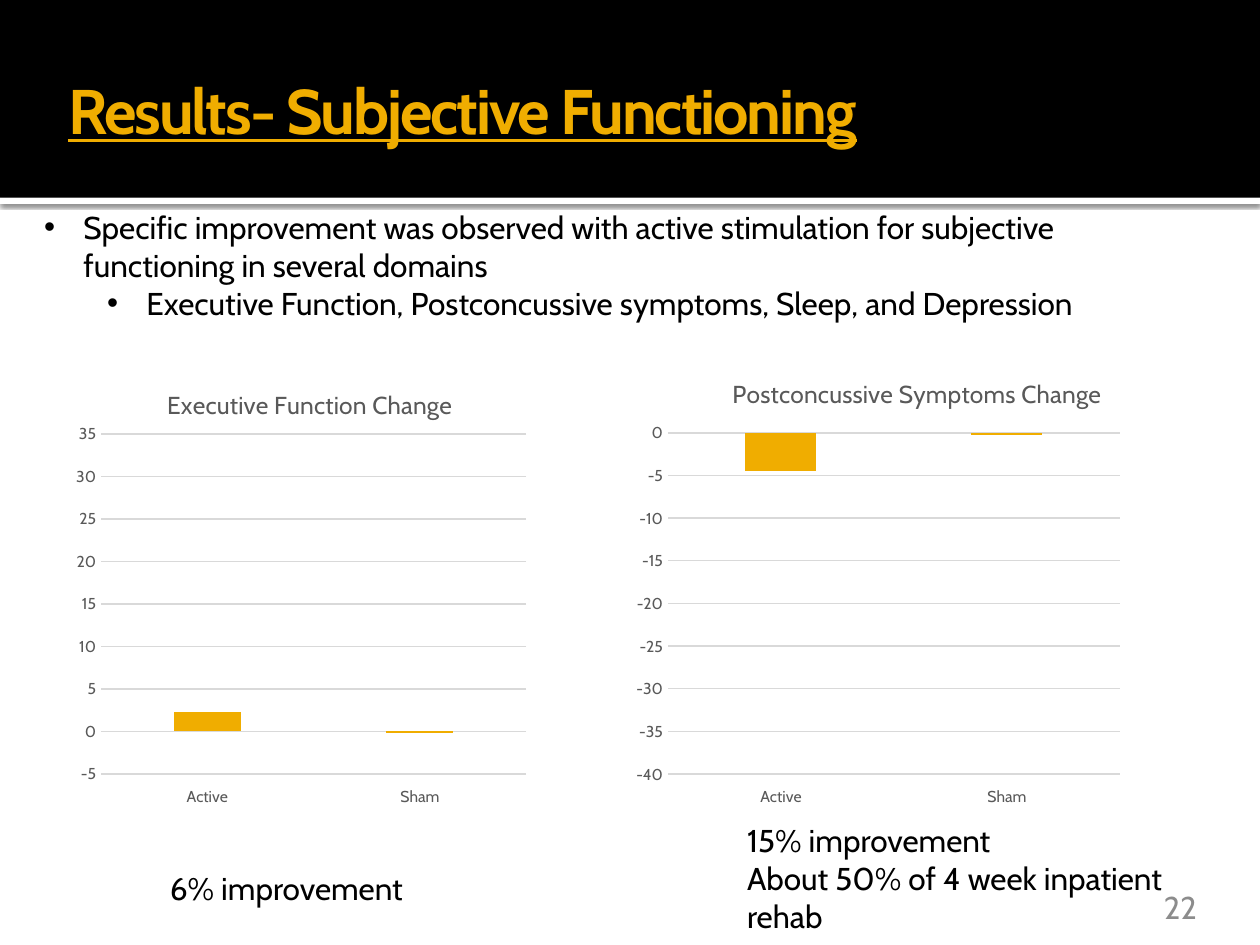
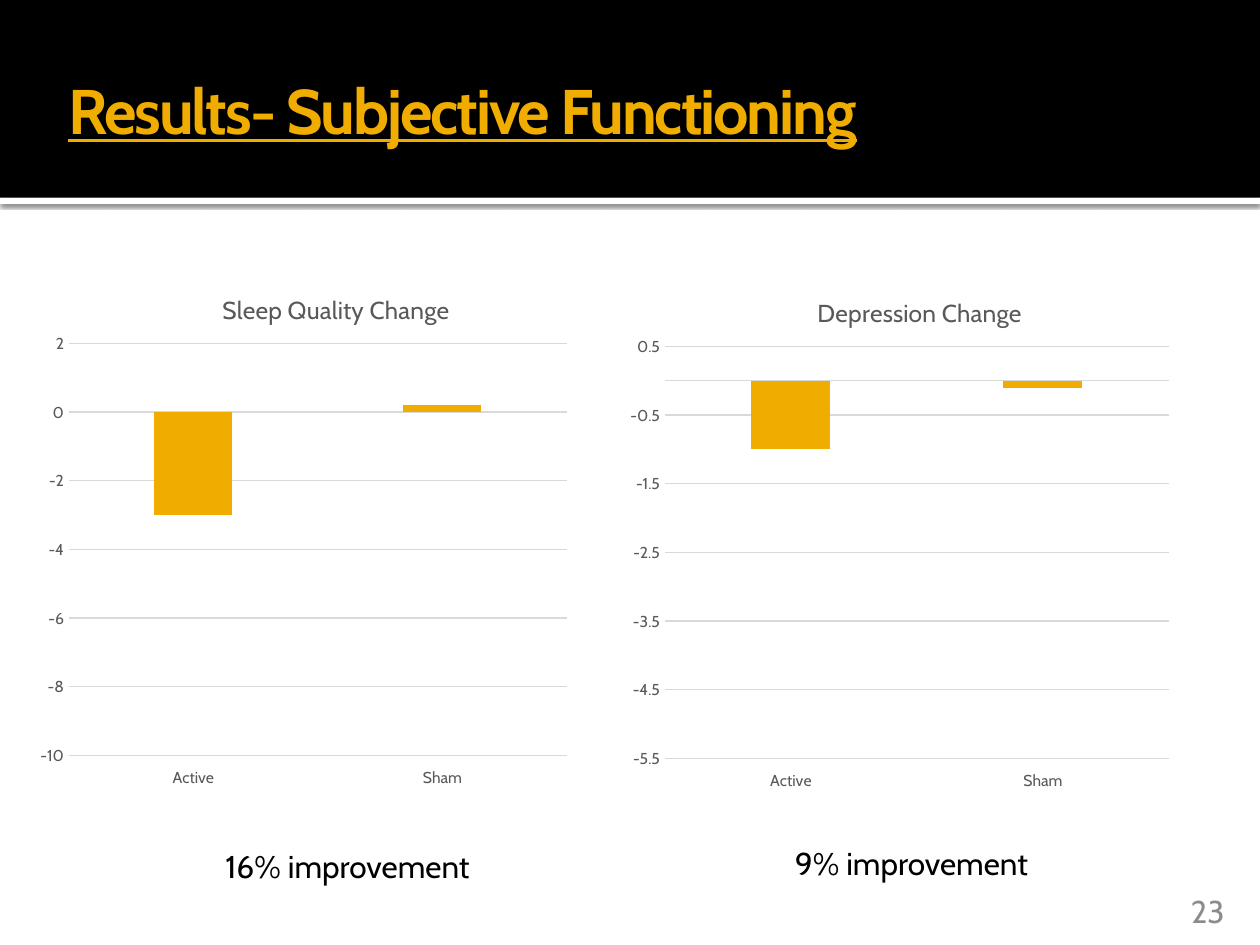
from dataclasses import dataclass
from typing import NamedTuple

from pptx import Presentation, oxml
from pptx.chart import data as chart_data
from pptx.dml.color import RGBColor
from pptx.enum import chart as chart_enum, shapes, text
from pptx.oxml import ns
from pptx.util import Pt

FONT = "Cabin"
COLOURS = {
    "gold": "F0AD00",
    "black": "000000",
    "white": "FFFFFF",
    "label": "595959",
    "grid": "D9D9D9",
    "number": "8C8C8C",
}
TITLE = "Results- Subjective Functioning"
GROUPS = ("Active", "Sham")
BAND_HEIGHT = 113


class Frame(NamedTuple):
    left: float
    top: float
    width: float
    height: float


@dataclass
class Panel:
    """A change chart; title_at and plot are measured on the slide."""
    title: str
    values: tuple[float, float]
    low: float
    high: float
    step: float
    frame: Frame
    title_at: tuple[float, float]
    plot: Frame


@dataclass
class Note:
    lines: list[str]
    frame: Frame


@dataclass
class Results:
    number: str
    number_frame: Frame
    panels: list[Panel]
    notes: list[Note]
    findings: list[tuple[str, int]]


RESULTS = [
    Results(
        "22", Frame(518.4, 501.8, 165.6, 27.4),
        [
            Panel("Executive Function Change", (2.3, -0.2), -5, 35, 5,
                  Frame(38.2, 202.3, 267.8, 263.5), (93, 219),
                  Frame(57.7, 248, 243, 194.3)),
            Panel("Postconcussive Symptoms Change", (-4.5, -0.2), -40, 0, 5,
                  Frame(357.8, 203, 288, 263.5), (416, 213),
                  Frame(381.7, 247.4, 258.3, 195)),
        ],
        [
            Note(["15% improvement", "About 50% of 4 week inpatient rehab"],
                 Frame(419.8, 465.8, 288, 72.7)),
            Note(["6% improvement"], Frame(90, 493.2, 239.8, 28.8)),
        ],
        [
            ("Specific improvement was observed with active stimulation for "
             "subjective functioning in several domains", 0),
            ("Executive Function, Postconcussive symptoms, Sleep, and Depression", 1),
        ],
    ),
    Results(
        "23", Frame(534.2, 504, 165.6, 27.4),
        [
            Panel("Sleep Quality Change", (-3, 0.2), -10, 2, 2,
                  Frame(16.6, 149.8, 313.2, 306), (124.6, 164.8),
                  Frame(39.4, 196.3, 284.6, 235.4)),
            Panel("Depression Change", (-1, -0.1), -5.5, 0.5, 1,
                  Frame(354.2, 151.9, 320.4, 306), (464.6, 166.6),
                  Frame(380, 198, 288, 235.4)),
        ],
        [
            Note(["9% improvement"], Frame(447.1, 478.8, 270, 51.1)),
            Note(["16% improvement"], Frame(121.7, 480.2, 264.2, 51.1)),
        ],
        [],
    ),
]


def colour(name: str) -> RGBColor:
    return RGBColor.from_string(COLOURS[name])


def place(box, frame: Frame) -> None:
    box.left, box.top, box.width, box.height = map(Pt, frame)


def style_font(font, size: float, name: str, bold: bool = False, underline: bool = False) -> None:
    font.name, font.size, font.bold, font.underline = FONT, Pt(size), bold, underline
    font.color.rgb = colour(name)


def write(box, lines: list[str], *, size: float = 18, name: str = "black",
          align=text.PP_ALIGN.LEFT, anchor=text.MSO_ANCHOR.TOP,
          insets: tuple = (7.2, 3.6, 7.2, 3.6), bold: bool = False,
          underline: bool = False) -> None:
    frame = box.text_frame
    frame.word_wrap = True
    frame.auto_size = text.MSO_AUTO_SIZE.NONE
    frame.vertical_anchor = anchor
    (frame.margin_left, frame.margin_top,
     frame.margin_right, frame.margin_bottom) = map(Pt, insets)
    frame.text = "\n".join(lines)
    for para in frame.paragraphs:
        para.alignment = align
        para.space_before = Pt(0)
        style_font(para.runs[0].font, size, name, bold, underline)


def add_text(page, frame: Frame, lines: list[str], **format_) -> None:
    write(page.shapes.add_textbox(*map(Pt, frame)), lines, **format_)


def add_bands(deck, page) -> None:
    """Put the header band and its shadowed rule at the back of the master."""
    back = deck.slide_master.shapes.element
    bands = [("white", Frame(0, BAND_HEIGHT, 720, 3.6)),
             ("black", Frame(0, 0, 720, BAND_HEIGHT))]
    for order, (name, frame) in enumerate(bands):
        box = page.shapes.add_shape(shapes.MSO_SHAPE.RECTANGLE, *map(Pt, frame))
        box.shadow.inherit = False
        box.fill.solid()
        box.fill.fore_color.rgb = colour(name)
        box.line.fill.background()
        if name == "white":
            box.element.spPr.find(ns.qn("a:effectLst")).append(oxml.parse_xml(
                f'<a:outerShdw {ns.nsdecls("a")} blurRad="{Pt(2.5)}" dist="{Pt(0.8)}" '
                f'dir="5400000"><a:srgbClr val="{COLOURS["black"]}">'
                '<a:alpha val="60000"/></a:srgbClr></a:outerShdw>'))
        box.element.nvSpPr.cNvPr.set("id", str(20 + order))
        back.insert(2 + order, box.element)


def add_title(page) -> None:
    box = page.shapes.title
    place(box, Frame(38.9, 27.4, 463, 56.9))
    write(box, [TITLE], size=36, name="gold", bold=True, underline=True,
          anchor=text.MSO_ANCHOR.MIDDLE, insets=(0, 13, 0, 0))
    for properties in box.element.iter(ns.qn("a:rPr")):
        properties.set("spc", "-120")


def add_findings(page, findings: list[tuple[str, int]]) -> None:
    box = page.placeholders[1]
    place(box, Frame(18, 115.2, 635.8, 72.7))
    write(box, [line for line, _ in findings])
    for para, (_, level) in zip(box.text_frame.paragraphs, findings):
        para.level = level
        properties = para._p.get_or_add_pPr()
        properties.set("marL", str(Pt(22.5 + 36 * level)))
        properties.set("indent", str(Pt(-22.5)))
        for bullet in ('buFont typeface="Arial"', 'buChar char="•"'):
            properties.append(oxml.parse_xml(f'<a:{bullet} {ns.nsdecls("a")}/>'))


def set_layout(parent, index: int, target: str = "", **position: float) -> None:
    """Fix a chart part by fractions of the chart area."""
    for old in parent.findall(ns.qn("c:layout")):
        parent.remove(old)
    inner = f'<c:layoutTarget val="{target}"/>' if target else ""
    modes = '<c:xMode val="edge"/><c:yMode val="edge"/>'
    values = "".join(f'<c:{key} val="{value:.4f}"/>' for key, value in position.items())
    parent.insert(index, oxml.parse_xml(
        f'<c:layout {ns.nsdecls("c")}><c:manualLayout>{inner}{modes}{values}'
        '</c:manualLayout></c:layout>'))


def style_axes(chart, panel: Panel) -> None:
    groups, scale = chart.category_axis, chart.value_axis
    for axis in (groups, scale):
        axis.major_tick_mark = axis.minor_tick_mark = chart_enum.XL_TICK_MARK.NONE
        style_font(axis.tick_labels.font, 9, "label")
    groups.tick_label_position = chart_enum.XL_TICK_LABEL_POSITION.LOW
    scale.minimum_scale, scale.maximum_scale = panel.low, panel.high
    scale.major_unit = panel.step
    scale.has_major_gridlines = True
    scale.format.line.fill.background()
    for line in (groups.format.line, scale.major_gridlines.format.line):
        line.color.rgb = colour("grid")
        line.width = Pt(0.75)


def add_panel(page, panel: Panel) -> None:
    data = chart_data.CategoryChartData()
    data.categories = GROUPS
    data.add_series("Series 1", panel.values)
    chart = page.shapes.add_chart(chart_enum.XL_CHART_TYPE.COLUMN_CLUSTERED,
                                  *map(Pt, panel.frame), data).chart
    style_font(chart.font, 10, "black")
    chart.has_legend = False
    chart.has_title = True
    heading = chart.chart_title.text_frame
    heading.text = panel.title
    style_font(heading.paragraphs[0].runs[0].font, 14, "label")

    bars = chart.plots[0]
    bars.vary_by_categories = False
    bars.gap_width, bars.overlap = 219, -27
    series = bars.series[0]
    series.invert_if_negative = False
    series.format.fill.solid()
    series.format.fill.fore_color.rgb = colour("gold")
    style_axes(chart, panel)

    left, top, width, height = panel.frame
    title_left, title_top = panel.title_at
    set_layout(chart.chart_title.element, 1,
               x=(title_left - left) / width, y=(title_top - top) / height)
    plot = panel.plot
    set_layout(chart.element.find(".//" + ns.qn("c:plotArea")), 0, "inner",
               x=(plot.left - left) / width, y=(plot.top - top) / height,
               w=plot.width / width, h=plot.height / height)


def main() -> None:
    deck = Presentation()
    deck.slide_width, deck.slide_height = Pt(720), Pt(540)
    list_layout = deck.slide_layouts.get_by_name("Title and Content")
    title_layout = deck.slide_layouts.get_by_name("Title Only")
    for index, results in enumerate(RESULTS):
        page = deck.slides.add_slide(list_layout if results.findings else title_layout)
        if index == 0:
            add_bands(deck, page)
        add_title(page)
        add_text(page, results.number_frame, [results.number], name="number",
                 align=text.PP_ALIGN.RIGHT, anchor=text.MSO_ANCHOR.BOTTOM,
                 insets=(0, 0, 0, 0))
        if results.findings:
            add_findings(page, results.findings)
        for note in results.notes:
            add_text(page, note.frame, note.lines)
        for panel in results.panels:
            add_panel(page, panel)
    deck.save("out.pptx")


if __name__ == "__main__":
    main()
